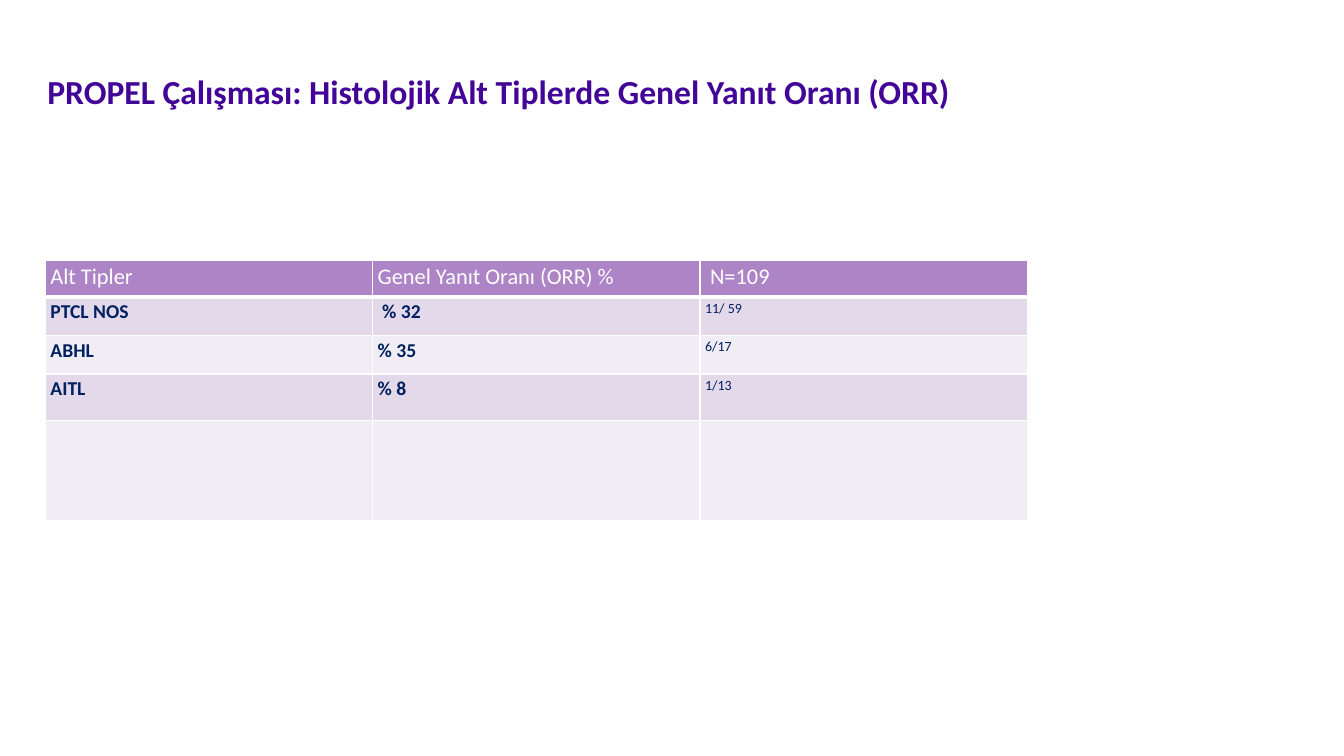
import dataclasses

import lxml.etree
import pptx
import pptx.dml.color
import pptx.enum.text
import pptx.oxml.ns
import pptx.util

Inches = pptx.util.Inches
Pt = pptx.util.Pt


@dataclasses.dataclass(frozen=True)
class Theme:
    font: str = "Calibri"
    title: str = "420598"
    head: str = "AD84C6"
    bands: tuple = ("E3D9EA", "F1EDF5")
    body: str = "002060"
    white: str = "FFFFFF"
    big: int = 24
    label: int = 16
    main: int = 14
    small: int = 10


THEME = Theme()
HEAD = ("Alt Tipler", "Genel Yanıt Oranı (ORR) %", " N=109")
ROWS = (
    ("PTCL NOS", " % 32", "11/ 59"),
    ("ABHL", "% 35", "6/17"),
    ("AITL", "% 8", "1/13"),
    ("", "", ""),
)
HEIGHTS = (0.37, 0.38, 0.38, 0.46, 1)


def color(value):
    return pptx.dml.color.RGBColor.from_string(value)


def add_run(frame, text, size, tint, bold=False):
    run = frame.paragraphs[0].add_run()
    run.text = text
    run.font.name = THEME.font
    run.font.size = Pt(size)
    run.font.bold = bold
    run.font.color.rgb = color(tint)


def add_title(slide, text):
    box = slide.shapes.add_textbox(Inches(0.47), Inches(0.38), Inches(10.94), Inches(1.05))
    frame = box.text_frame
    frame.word_wrap = True
    frame.vertical_anchor = pptx.enum.text.MSO_ANCHOR.MIDDLE
    frame.margin_left = frame.margin_right = 0
    frame.margin_top = frame.margin_bottom = 0
    frame.paragraphs[0].space_after = Pt(2.5)
    add_run(frame, text, THEME.big, THEME.title, True)


def add_edges(cell, base):
    qn = pptx.oxml.ns.qn
    props = cell._tc.get_or_add_tcPr()
    for side, width in zip("LRTB", (1, 1, 1, base)):
        line = lxml.etree.SubElement(props, qn(f"a:ln{side}"), w=str(Pt(width)))
        fill = lxml.etree.SubElement(line, qn("a:solidFill"))
        lxml.etree.SubElement(fill, qn("a:srgbClr"), val=THEME.white)


def fill_cell(cell, text, shade, size, tint, bold, base):
    add_edges(cell, base)
    cell.fill.solid()
    cell.fill.fore_color.rgb = color(shade)
    cell.margin_left = cell.margin_right = Inches(0.05)
    cell.margin_top = cell.margin_bottom = Inches(0.03)
    if text:
        add_run(cell.text_frame, text, size, tint, bold)


def add_grid(slide):
    frame = slide.shapes.add_table(
        len(HEIGHTS), len(HEAD), Inches(0.45), Inches(2.58), Inches(9.74), Inches(sum(HEIGHTS))
    )
    table = frame.table
    for row, height in zip(table.rows, HEIGHTS):
        row.height = Inches(height)
    for col, text in enumerate(HEAD):
        fill_cell(table.cell(0, col), text, THEME.head, THEME.label, THEME.white, False, 3)
    for row, texts in enumerate(ROWS):
        shade = THEME.bands[row % 2]
        for col, text in enumerate(texts):
            bold = col < 2
            size = THEME.main if bold else THEME.small
            fill_cell(table.cell(row + 1, col), text, shade, size, THEME.body, bold, 1)


def main():
    deck = pptx.Presentation()
    deck.slide_width = Inches(13.33)
    deck.slide_height = Inches(7.5)
    slide = deck.slides.add_slide(deck.slide_layouts[6])
    add_title(slide, "PROPEL Çalışması: Histolojik Alt Tiplerde Genel Yanıt Oranı (ORR)")
    add_grid(slide)
    deck.save("out.pptx")


if __name__ == "__main__":
    main()
